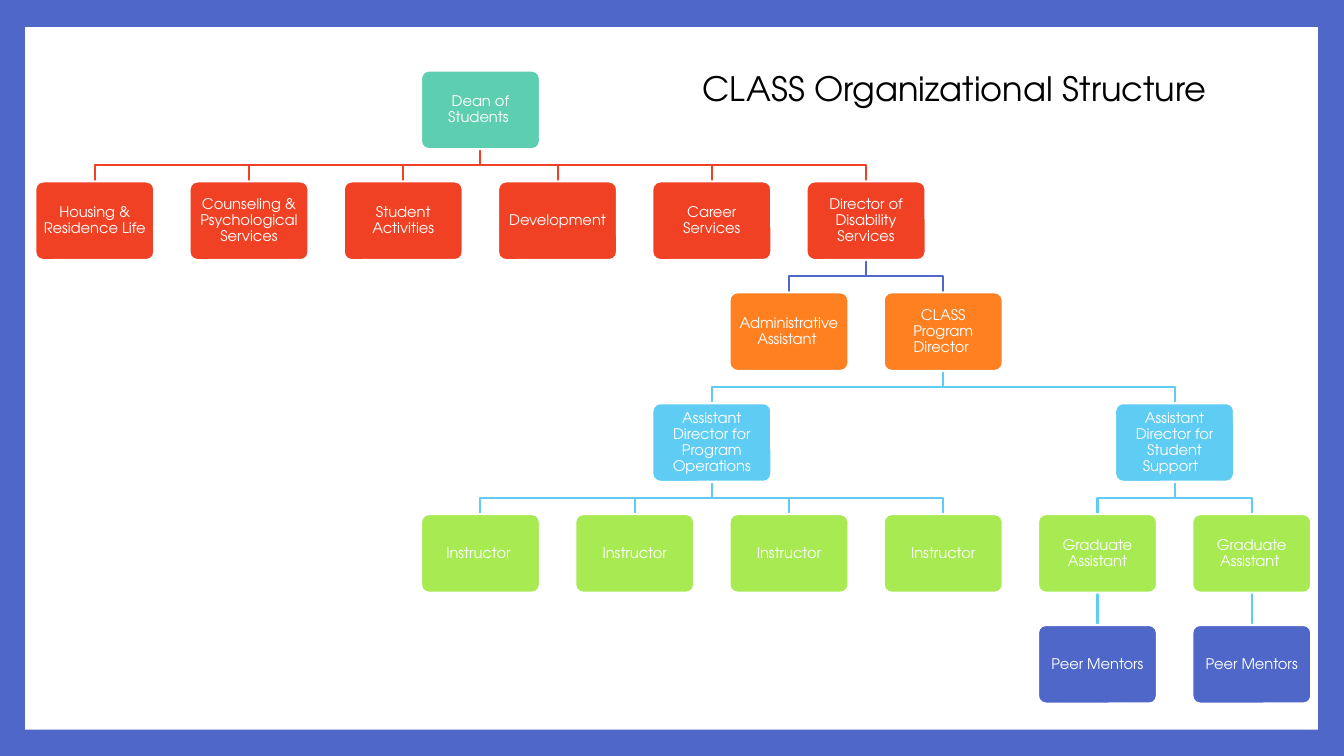
import pptx
import pptx.util
import pptx.dml.color
import pptx.enum.shapes
import pptx.enum.text
from lxml import etree

FONT = "TeX Gyre Adventor"
COLORS = {
    "blue": "4E67C8", "white": "FFFFFF", "black": "000000", "teal": "5DCEAF",
    "red": "F14124", "orange": "FF8021", "sky": "5ECCF3", "green": "A7EA52",
}

# Grid of boxes, in inches
LEFT, TOP = 0.35, 0.7
COL, ROW = 1.53, 1.1
BOX_W, BOX_H = 1.18, 0.78

# Fill of the boxes on each level, and colour of the lines leading into them
LEVEL_FILLS = ["teal", "red", "orange", "sky", "green", "blue"]
LEVEL_LINES = [None, "red", "blue", "sky", "sky", "sky"]

# Each post: (title, column, posts below)
ORG = ("Dean of Students ", 2.5, [
    ("Housing & Residence Life ", 0, []),
    ("Counseling & Psychological Services", 1, []),
    ("Student Activities", 2, []),
    ("Development", 3, []),
    ("Career Services", 4, []),
    ("Director of Disability Services", 5, [
        ("Administrative Assistant ", 4.5, []),
        ("CLASS Program Director ", 5.5, [
            ("Assistant Director for Program Operations", 4, [
                ("Instructor ", 2.5, []),
                ("Instructor", 3.5, []),
                ("Instructor", 4.5, []),
                ("Instructor", 5.5, []),
            ]),
            ("Assistant Director for Student Support  ", 7, [
                ("Graduate Assistant", 6.5, [("Peer Mentors", 6.5, [])]),
                ("Graduate Assistant ", 7.5, [("Peer Mentors", 7.5, [])]),
            ]),
        ]),
    ]),
])


def inch(value):
    return pptx.util.Inches(value)


def rgb(name):
    return pptx.dml.color.RGBColor.from_string(COLORS[name])


def add_run(p, text, size, color):
    r = p.add_run()
    r.text = text
    r.font.name = FONT
    r.font.size = pptx.util.Pt(size)
    r.font.color.rgb = rgb(color)


def style_line(shape, color):
    shape.line.color.rgb = rgb(color)
    shape.line.width = pptx.util.Pt(1.5)


def add_frame(s, prs):
    """Blue background with a white panel."""
    s.background.fill.solid()
    s.background.fill.fore_color.rgb = rgb("blue")
    w, h = prs.slide_width, prs.slide_height
    sp = s.shapes.add_shape(pptx.enum.shapes.MSO_SHAPE.RECTANGLE,
                            inch(0.25), inch(0.27), inch(12.82), inch(6.97))
    sp.shadow.inherit = False
    sp.fill.solid()
    sp.fill.fore_color.rgb = rgb("white")
    sp.line.fill.background()


def add_title(s, text):
    tf = s.shapes.add_textbox(inch(6.87), inch(0.62), inch(5.66), inch(0.5)).text_frame
    tf.word_wrap = True
    add_run(tf.paragraphs[0], text, 24, "black")


def add_box(s, text, col, level):
    sp = s.shapes.add_shape(pptx.enum.shapes.MSO_SHAPE.ROUNDED_RECTANGLE,
                            inch(LEFT + col * COL), inch(TOP + level * ROW),
                            inch(BOX_W), inch(BOX_H))
    sp.adjustments[0] = 0.1
    sp.shadow.inherit = False
    sp.fill.solid()
    sp.fill.fore_color.rgb = rgb(LEVEL_FILLS[level])
    style_line(sp, "white")
    tf = sp.text_frame
    tf.word_wrap = True
    tf.vertical_anchor = pptx.enum.text.MSO_ANCHOR.MIDDLE
    tf.margin_left = tf.margin_right = tf.margin_top = tf.margin_bottom = inch(0.05)
    p = tf.paragraphs[0]
    p.alignment = pptx.enum.text.PP_ALIGN.CENTER
    p.line_spacing = 0.9
    add_run(p, text, 10.5, "white")


def add_link(s, parent_col, child_col, child_level):
    """Line from the foot of a box to the head of a box one level down."""
    x1, x2 = (inch(LEFT + c * COL + BOX_W / 2) for c in (parent_col, child_col))
    y2 = inch(TOP + child_level * ROW)
    y1 = y2 - inch(ROW - BOX_H)
    if x1 == x2:
        link = s.shapes.add_connector(pptx.enum.shapes.MSO_CONNECTOR.STRAIGHT, x1, y1, x2, y2)
        etree.SubElement(link._element.spPr, pptx.oxml.ns.qn("a:effectLst"))
    else:
        middle = (y1 + y2) // 2
        builder = s.shapes.build_freeform(x1, y1)
        builder.add_line_segments([(x1, middle), (x2, middle), (x2, y2)], close=False)
        link = builder.convert_to_shape()
        link.shadow.inherit = False
        link.fill.background()
    style_line(link, LEVEL_LINES[child_level])


def add_links(s, post, level=0):
    title, col, below = post
    for child in below:
        add_link(s, col, child[1], level + 1)
        add_links(s, child, level + 1)


def add_boxes(s, post, level=0):
    title, col, below = post
    add_box(s, title, col, level)
    for child in below:
        add_boxes(s, child, level + 1)


def main():
    prs = pptx.Presentation()
    prs.slide_width, prs.slide_height = inch(13.33), inch(7.5)
    s = prs.slides.add_slide(prs.slide_layouts[6])
    add_frame(s, prs)
    # Lines first, so that the white box outlines trim their ends
    add_links(s, ORG)
    add_boxes(s, ORG)
    add_title(s, "CLASS Organizational Structure")
    prs.save("out.pptx")


if __name__ == "__main__":
    main()
